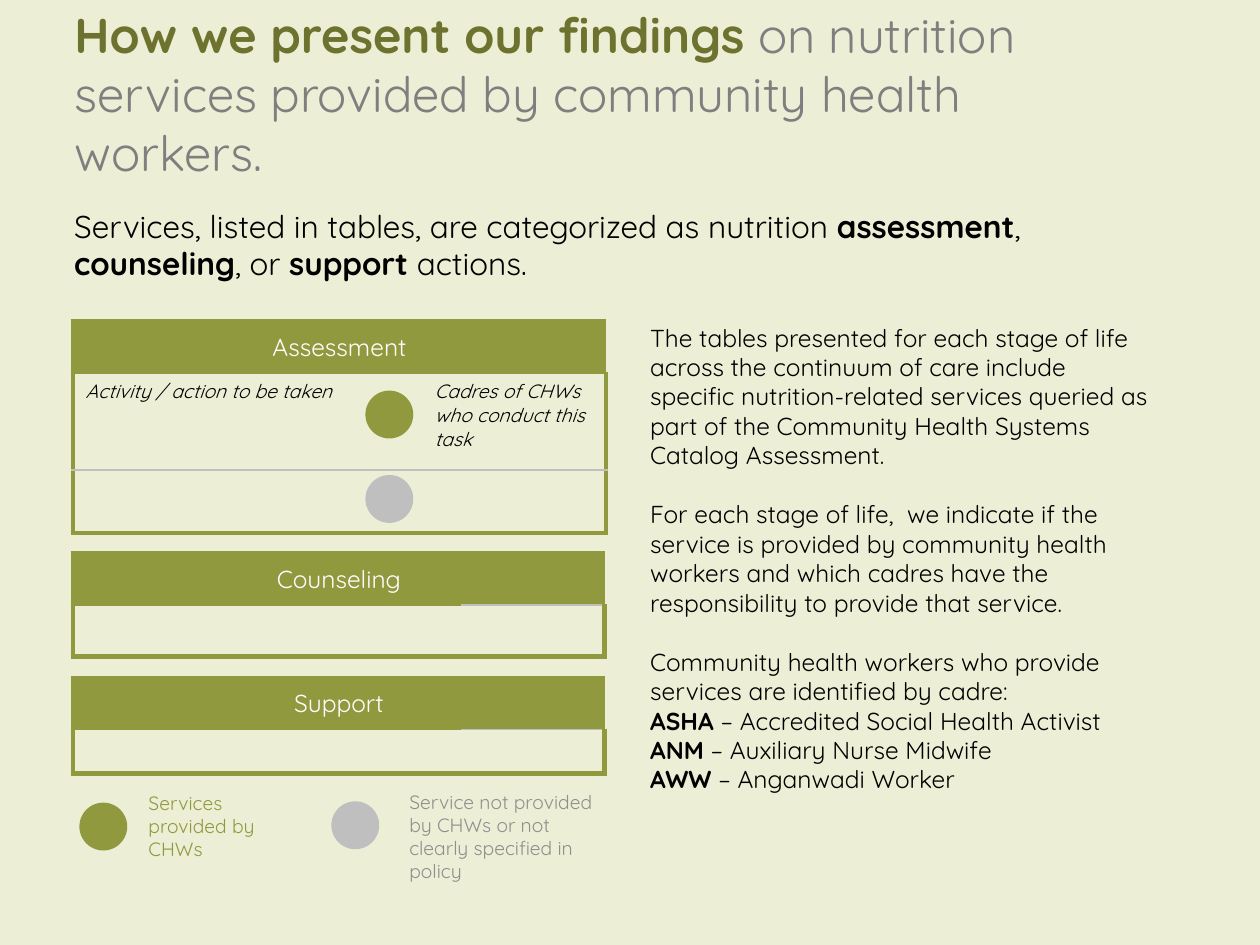
from lxml import etree
from pptx import Presentation
from pptx.dml.color import RGBColor
from pptx.enum.shapes import MSO_SHAPE
from pptx.enum.text import MSO_ANCHOR, MSO_AUTO_SIZE, PP_ALIGN
from pptx.oxml.ns import qn
from pptx.util import Inches, Pt

OVAL = MSO_SHAPE.OVAL
LEFT, CENTER = PP_ALIGN.LEFT, PP_ALIGN.CENTER
TOP, MIDDLE = MSO_ANCHOR.TOP, MSO_ANCHOR.MIDDLE
NO_AUTOFIT = MSO_AUTO_SIZE.NONE

FONT = "Quicksand"
COLORS = {
    "background": "ECEED5",
    "olive": "91993E",
    "dark olive": "6D732F",
    "title gray": "7F7F7F",
    "legend gray": "8F8F8F",
    "silver": "BFBFBF",
    "black": "000000",
    "white": "FFFFFF",
}
TABLE_LEFT = 0.58
HEADER_HEIGHT = 0.41
DOT_SIZE = 0.38
THIN, THICK = 1, 3


def color(name):
    return RGBColor.from_string(COLORS[name])


def style_font(font, size, color_name, italic=None):
    font.name = FONT
    font.size = Pt(size)
    font.color.rgb = color(color_name)
    font.italic = italic


def place(shape, left, top, width, height):
    shape.left, shape.top = Inches(left), Inches(top)
    shape.width, shape.height = Inches(width), Inches(height)


def write_spans(para, spans, size, color_name):
    """Fill a paragraph with (text, bold) spans in one size and color."""
    para.alignment = LEFT
    style_font(para.font, size, color_name)
    for text, bold in spans:
        span = para.add_run()
        span.text = text
        span.font.bold = bold


def add_text(page, left, top, width, height, spans, size, color_name="black"):
    box = page.shapes.add_textbox(
        Inches(left), Inches(top), Inches(width), Inches(height))
    box.text_frame.word_wrap = True
    write_spans(box.text_frame.paragraphs[0], spans, size, color_name)


def add_dot(page, left, top, color_name):
    dot = page.shapes.add_shape(
        OVAL, Inches(left), Inches(top), Inches(DOT_SIZE), Inches(DOT_SIZE))
    dot.shadow.inherit = False
    dot.fill.solid()
    dot.fill.fore_color.rgb = color(color_name)
    dot.line.fill.background()


def set_borders(cell, borders):
    """Draw the given sides as (color, points); hide the other sides."""
    properties = cell._tc.get_or_add_tcPr()
    for index, side in enumerate(("lnL", "lnR", "lnT", "lnB")):
        line = etree.Element(qn(f"a:{side}"))
        if side in borders:
            color_name, points = borders[side]
            line.set("w", str(Pt(points)))
            fill = etree.SubElement(line, qn("a:solidFill"))
            etree.SubElement(fill, qn("a:srgbClr"), val=COLORS[color_name])
        else:
            etree.SubElement(line, qn("a:noFill"))
        properties.insert(index, line)


def cell_borders(row, column, last_row, last_column):
    """Thick olive frame, thin rules between the rows."""
    frame, olive, silver = ("olive", THICK), ("olive", THIN), ("silver", THIN)
    borders = {}
    if column == 0:
        borders["lnL"] = frame
    if column == last_column:
        borders["lnR"] = frame
    if row == 0:
        borders["lnT"], borders["lnB"] = frame, olive
    else:
        gray_top = row > 1 or (last_column == 1 and column == 1)
        borders["lnT"] = silver if gray_top else olive
        borders["lnB"] = frame if row == last_row else silver
    return borders


def add_service_table(page, top, heading, widths, heights, notes=None):
    """Add a headed table; notes maps (row, column) to italic text."""
    notes = notes or {}
    heights = [HEADER_HEIGHT] + heights
    table = page.shapes.add_table(
        len(heights), len(widths), Inches(TABLE_LEFT), Inches(top),
        Inches(sum(widths)), Inches(sum(heights))).table
    table.first_row = table.horz_banding = False
    for column, width in zip(table.columns, widths):
        column.width = Inches(width)
    for row, height in zip(table.rows, heights):
        row.height = Inches(height)

    last_row, last_column = len(heights) - 1, len(widths) - 1
    for r in range(len(heights)):
        for c in range(len(widths)):
            cell = table.cell(r, c)
            if r == 0:
                cell.fill.solid()
                cell.fill.fore_color.rgb = color("olive")
            else:
                cell.fill.background()
                cell.text = notes.get((r, c), "")
                style_font(cell.text_frame.paragraphs[0].font, 11, "black", True)
                if not cell.text:
                    cell.margin_top = cell.margin_bottom = 0
            set_borders(cell, cell_borders(r, c, last_row, last_column))

    header = table.cell(0, 0)
    header.merge(table.cell(0, last_column))
    header.text = heading
    header.vertical_anchor = MIDDLE
    para = header.text_frame.paragraphs[0]
    para.alignment = CENTER
    style_font(para.font, 14, "white")


def fill_title(title):
    place(title, 0.49, 0.4, 8.76, 0.68)
    frame = title.text_frame
    frame.auto_size = NO_AUTOFIT
    frame.vertical_anchor = MIDDLE
    para = frame.paragraphs[0]
    write_spans(para, [
        ("How we present our findings ", True),
        ("on nutrition services provided by community health workers.", False),
    ], 28, "title gray")
    para.runs[0].font.color.rgb = color("dark olive")


def fill_body(body, paragraphs):
    """Fill the body with (spans, space before) paragraphs, unbulleted."""
    place(body, 5.06, 2.51, 4.19, 3.87)
    frame = body.text_frame
    frame.auto_size = NO_AUTOFIT
    frame.vertical_anchor = TOP
    for index, (spans, gap) in enumerate(paragraphs):
        para = frame.add_paragraph() if index else frame.paragraphs[0]
        write_spans(para, spans, 14, "black")
        para.space_before = Pt(gap)
        properties = para._p.get_or_add_pPr()
        properties.set("marL", "0")
        properties.set("indent", "0")
        bullet = etree.Element(qn("a:buNone"))
        properties.find(qn("a:defRPr")).addprevious(bullet)


def main():
    deck = Presentation()
    deck.slide_width, deck.slide_height = Inches(10), Inches(7.5)
    page = deck.slides.add_slide(deck.slide_layouts[1])
    page.background.fill.solid()
    page.background.fill.fore_color.rgb = color("background")

    # Title and introduction
    fill_title(page.shapes.title)
    add_text(page, 0.49, 1.59, 7.76, 0.71, [
        ("Services, listed in tables, are categorized as nutrition ", False),
        ("assessment", True), (", ", False), ("counseling", True),
        (", or ", False), ("support ", True), ("actions.", False)], 18)

    # Explanation on the right
    cadres = [("ASHA", "Accredited Social Health Activist"),
              ("ANM", "Auxiliary Nurse Midwife"), ("AWW", "Anganwadi Worker")]
    fill_body(page.placeholders[1], [
        ([("The tables presented for each stage of life across the continuum of care include specific nutrition-related services queried as part of the Community Health Systems Catalog Assessment.", False)], 0),
        ([("For each stage of life,  we indicate if the service is provided by community health workers and which cadres have the responsibility to provide that service.", False)], 17),
        ([("Community health workers who provide services are identified by cadre:", False)], 17),
    ] + [([(short, True), (f" – {name}", False)], 0) for short, name in cadres])

    # Sample tables
    add_service_table(page, 2.55, "Assessment", [2.27, 0.5, 1.46], [0.77, 0.5], {
        (1, 0): "Activity / action to be taken",
        (1, 2): "Cadres of CHWs who conduct this task"})
    add_service_table(page, 4.39, "Counseling", [3.08, 1.14], [0.41])
    add_service_table(page, 5.38, "Support", [3.08, 1.14], [0.35])

    # Markers in the table and in the legend
    for left, top, name in [(2.9, 3.1, "olive"), (2.9, 3.77, "silver"),
                            (0.63, 6.37, "olive"), (2.63, 6.36, "silver")]:
        add_dot(page, left, top, name)
    add_text(page, 1.08, 6.23, 1.35, 0.66,
             [("Services provided by CHWs", False)], 11, "olive")
    add_text(page, 3.15, 6.22, 1.75, 0.66,
             [("Service not provided by CHWs or not clearly specified in policy", False)],
             11, "legend gray")

    deck.save("out.pptx")


if __name__ == "__main__":
    main()
